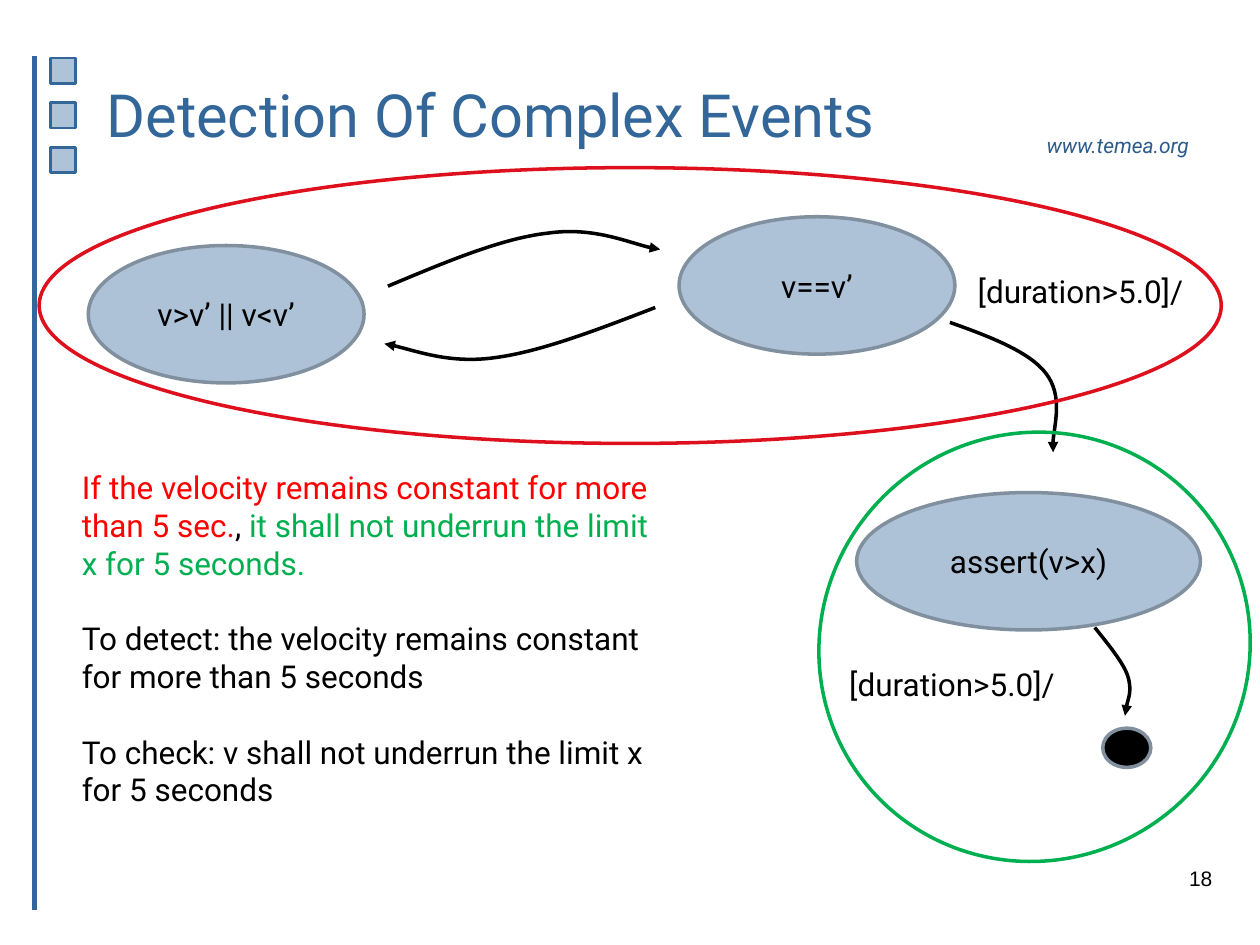
from lxml import etree
from pptx import Presentation
from pptx.dml.color import RGBColor
from pptx.enum.shapes import MSO_CONNECTOR as Connector, MSO_SHAPE as Preset
from pptx.enum.text import MSO_ANCHOR as Anchor, PP_ALIGN as Align
from pptx.oxml.ns import qn
from pptx.util import Cm, Pt

BLUE, PALE_BLUE, STATE_BLUE, GREY = "336699", "AEC3D7", "AEC2D7", "81909F"
BLACK, RED, GREEN, RING_RED = "000000", "FF0000", "00B050", "DE101D"
STATE_WIDTH, STATE_HEIGHT = 5.56, 2.77


def color(hex_string):
    return RGBColor.from_string(hex_string)


def set_font(run, size, hex_string, name="Roboto", italic=False):
    font = run.font
    font.name, font.size, font.italic = name, Pt(size), italic
    font.color.rgb = color(hex_string)


def set_line(shape, hex_string, width):
    shape.line.color.rgb = color(hex_string)
    shape.line.width = Pt(width)


def add_text(slide, box, text, size=18, hex_string=BLACK, name="Roboto",
             italic=False, align=Align.LEFT, anchor=Anchor.TOP, wrap=True):
    text_box = slide.shapes.add_textbox(*map(Cm, box))
    frame = text_box.text_frame
    frame.text = text
    frame.word_wrap = wrap
    frame.vertical_anchor = anchor
    frame.paragraphs[0].alignment = align
    set_font(frame.paragraphs[0].runs[0], size, hex_string, name, italic)


def add_preset(slide, preset, box, fill, line, width=2, text=""):
    shape = slide.shapes.add_shape(preset, *map(Cm, box))
    shape.shadow.inherit = False
    if fill:
        shape.fill.solid()
        shape.fill.fore_color.rgb = color(fill)
    else:
        shape.fill.background()
    set_line(shape, line, width)
    if text:
        frame = shape.text_frame
        frame.text = text
        frame.vertical_anchor = Anchor.MIDDLE
        frame.paragraphs[0].alignment = Align.CENTER
        set_font(frame.paragraphs[0].runs[0], 18, BLACK)
    return shape


def add_curved_arrow(slide, left, top, points):
    """Draw a start point followed by groups of three Bezier points."""
    start, *rest = [(Cm(left + x), Cm(top + y)) for x, y in points]
    builder = slide.shapes.build_freeform(*start)
    builder.add_line_segments(rest, close=False)
    arrow = builder.convert_to_shape()
    arrow.shadow.inherit = False
    arrow.fill.background()
    set_line(arrow, BLACK, 2)

    # Turn each three straight segments into one cubic curve
    path = next(arrow.element.iter(qn("a:path")))
    segments = path.findall(qn("a:lnTo"))
    for first in range(0, len(segments), 3):
        curve = etree.SubElement(path, qn("a:cubicBezTo"))
        for segment in segments[first:first + 3]:
            curve.append(segment[0])
            path.remove(segment)
    line = arrow.line._get_or_add_ln()
    etree.SubElement(line, qn("a:tailEnd"), type="triangle")


def add_frame(slide, left, top, height):
    # Vertical rule
    rule = slide.shapes.add_connector(
        Connector.STRAIGHT, Cm(left), Cm(top), Cm(left), Cm(top + height))
    set_line(rule, BLUE, 3)
    etree.SubElement(rule.element.spPr, qn("a:effectLst"))
    # Column of squares
    for row in range(3):
        add_preset(slide, Preset.RECTANGLE,
                   (left + 0.33, top + 0.05 + 0.9 * row, 0.51, 0.51),
                   PALE_BLUE, BLUE, 1.5)
    # Web address and page number
    add_text(slide, (left + 20.16, top + 1.42, 3.96, 0.76), "www.temea.org",
             12, "2D5C8A", italic=True)
    add_text(slide, (left + 18.08, top + 16.2, 5.92, 0.99), "18", 12,
             name="Arial", align=Align.RIGHT)


def add_detection(slide, left, top, width, height):
    # Transitions
    for points in (
        [(7.03, 2.39), (8.2, 1.9), (9.34, 1.42), (10.26, 1.32),
         (11.17, 1.19), (12.09, 1.6), (12.52, 1.65)],
        [(12.42, 2.82), (11.25, 3.27), (10.11, 3.71), (9.19, 3.83),
         (8.28, 3.96), (7.36, 3.61), (6.96, 3.55)],
        [(18.36, 3.12), (19.15, 3.4), (19.96, 3.71), (20.29, 4.14),
         (20.65, 4.6), (20.39, 5.46), (20.44, 5.74)],
    ):
        add_curved_arrow(slide, left, top, points)
    # States
    for x, y, text in ((0.99, 1.57, "v>v’ || v<v’"), (12.9, 0.99, "v==v’")):
        add_preset(slide, Preset.OVAL,
                   (left + x, top + y, STATE_WIDTH, STATE_HEIGHT),
                   STATE_BLUE, GREY, text=text)
    add_text(slide, (left + 18.67, top + 1.98, 4.95, 1.02),
             "[duration>5.0]/", wrap=False)
    # Surrounding ring
    add_preset(slide, Preset.OVAL, (left, top, width, height), None, RING_RED)


def add_check(slide, left, top, width, height):
    # End state, transition and asserted state
    add_preset(slide, Preset.OVAL, (left + 5.67, top + 6.02, 0.97, 0.79),
               BLACK, GREY)
    add_curved_arrow(slide, left, top, [
        (5.51, 3.99), (5.79, 4.34), (6.07, 4.68), (6.17, 4.95),
        (6.27, 5.26), (6.12, 5.61), (6.12, 5.77)])
    add_preset(slide, Preset.OVAL,
               (left + 0.71, top + 1.27, 6.93, STATE_HEIGHT),
               STATE_BLUE, GREY, text="assert(v>x)")
    add_text(slide, (left + 0.31, top + 4.62, 4.95, 1.02),
             "[duration>5.0]/", wrap=False)
    # Surrounding ring
    ring = add_preset(slide, Preset.OVAL, (left, top, width, height),
                      None, GREEN)
    ring.rotation = 51.6


def add_requirement(slide, left, top, width, height):
    paragraphs = (
        [("If the velocity remains constant for more than 5 sec.", RED),
         (", ", BLACK),
         ("it shall not underrun the limit x for 5 seconds.", GREEN)],
        [("To detect: the velocity remains constant for more than 5 seconds",
          BLACK)],
        [("To check: v shall not underrun the limit x for 5 seconds", BLACK)],
    )
    frame = slide.shapes.add_textbox(
        *map(Cm, (left, top, width, height))).text_frame
    frame.word_wrap = True
    for index, parts in enumerate(paragraphs):
        paragraph = frame.add_paragraph() if index else frame.paragraphs[0]
        if index:
            paragraph.space_before = Pt(21.5)
        for text, hex_string in parts:
            run = paragraph.add_run()
            run.text = text
            set_font(run, 18, hex_string)


def main():
    presentation = Presentation()
    presentation.slide_width, presentation.slide_height = Cm(25.4), Cm(19.05)
    slide = presentation.slides.add_slide(presentation.slide_layouts[6])
    add_frame(slide, 0.69, 1.12, 17.22)
    add_text(slide, (1.9, 0.71, 18.59, 3.18), "Detection Of Complex Events",
             34, BLUE, anchor=Anchor.MIDDLE)
    add_detection(slide, 0.79, 3.38, 23.83, 5.56)
    add_requirement(slide, 1.4, 9.32, 12.12, 7.95)
    add_check(slide, 16.56, 8.66, 8.59, 8.76)
    presentation.save("out.pptx")


if __name__ == "__main__":
    main()
